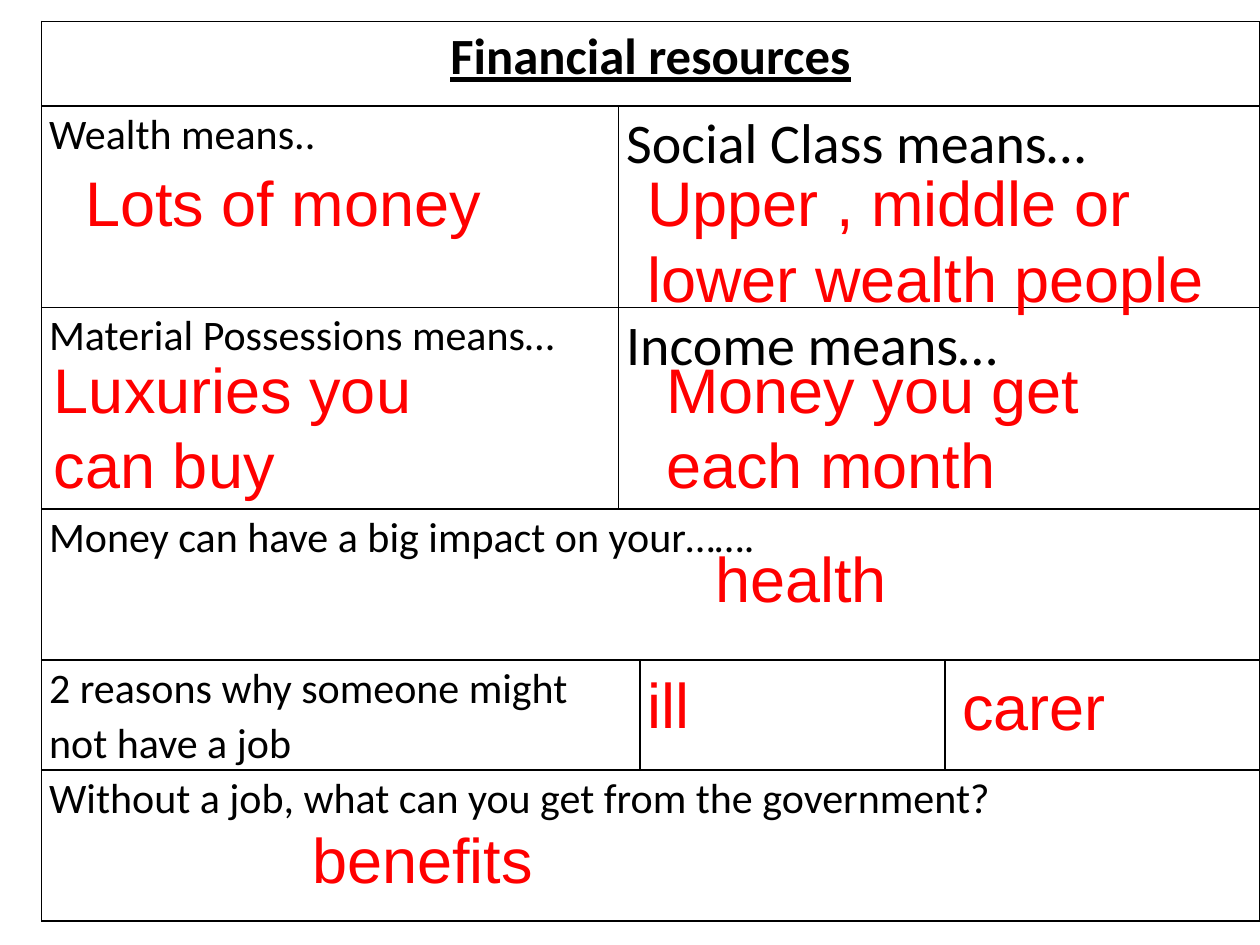
from dataclasses import dataclass

from lxml import etree
from pptx import Presentation
from pptx.dml.color import RGBColor
from pptx.enum.text import MSO_AUTO_SIZE, PP_ALIGN
from pptx.oxml.ns import qn
from pptx.slide import Slide
from pptx.table import Table, _Cell
from pptx.util import Inches, Pt

CENTER, LEFT = PP_ALIGN.CENTER, PP_ALIGN.LEFT
FIT_SHAPE = MSO_AUTO_SIZE.SHAPE_TO_FIT_TEXT
BLACK = RGBColor(0x00, 0x00, 0x00)
RED = RGBColor(0xFF, 0x00, 0x00)
BLANK_LAYOUT = 6
COLUMN_WIDTHS = (4.58, 0.17, 2.42, 2.5)
ROW_HEIGHTS = (0.67, 1.6, 1.6, 1.2, 0.86, 1.2)


@dataclass(frozen=True)
class Question:
    text: str
    row: int
    first_column: int
    last_column: int
    size: int = 24
    heading: bool = False


@dataclass(frozen=True)
class Answer:
    text: str
    left: float
    top: float
    width: float = 3.58
    height: float = 0.71


QUESTIONS = (
    Question("Financial resources", 0, 0, 3, 29, True),
    Question("Wealth means..", 1, 0, 0),
    Question("Social Class means…", 1, 1, 3, 32),
    Question("Material Possessions means…", 2, 0, 0),
    Question("Income means…", 2, 1, 3, 32),
    Question("Money can have a big impact on your…….", 3, 0, 3),
    Question("2 reasons why someone might not have a job", 4, 0, 1),
    Question("Without a job, what can you get from the government?", 5, 0, 3),
)

ANSWERS = (
    Answer("Lots of money", 0.58, 1.25),
    Answer("Upper , middle or lower wealth people", 5.04, 1.25, 5.17, 1.31),
    Answer("Luxuries you can buy", 0.33, 2.73, height=1.31),
    Answer("Money you get each month", 5.19, 2.73, height=1.31),
    Answer("health", 5.58, 4.23),
    Answer("ill", 5.04, 5.23, 2.46),
    Answer("carer", 7.54, 5.25),
    Answer("benefits", 2.38, 6.46),
)


def style_cell(cell: _Cell) -> None:
    """Give a cell thin black borders, no fill and narrow margins."""
    cell.margin_left = cell.margin_right = Inches(0.06)
    cell.margin_top = cell.margin_bottom = Inches(0)
    properties = cell._tc.get_or_add_tcPr()
    for side in ("a:lnL", "a:lnR", "a:lnT", "a:lnB"):
        line = etree.SubElement(properties, qn(side), w=str(Pt(1)))
        fill = etree.SubElement(line, qn("a:solidFill"))
        etree.SubElement(fill, qn("a:srgbClr"), val=str(BLACK))
    cell.fill.background()


def add_grid(slide: Slide) -> Table:
    """Add the empty worksheet grid."""
    frame = slide.shapes.add_table(
        len(ROW_HEIGHTS), len(COLUMN_WIDTHS), Inches(0.33), Inches(0.17),
        Inches(sum(COLUMN_WIDTHS)), Inches(sum(ROW_HEIGHTS)),
    )
    table = frame.table
    table.first_row = table.horz_banding = False
    for column, width in zip(table.columns, COLUMN_WIDTHS):
        column.width = Inches(width)
    for row, height in zip(table.rows, ROW_HEIGHTS):
        row.height = Inches(height)
    for cell in table.iter_cells():
        style_cell(cell)
    return table


def write_question(table: Table, question: Question) -> None:
    """Write a question across its columns of the grid."""
    cell = table.cell(question.row, question.first_column)
    if question.last_column > question.first_column:
        cell.merge(table.cell(question.row, question.last_column))
    cell.text_frame.text = question.text
    paragraph = cell.text_frame.paragraphs[0]
    paragraph.line_spacing = 1.07
    paragraph.alignment = CENTER if question.heading else LEFT
    font = paragraph.runs[0].font
    font.name = "Calibri"
    font.size = Pt(question.size)
    font.color.rgb = BLACK
    font.bold = font.underline = question.heading


def add_answer(slide: Slide, answer: Answer) -> None:
    """Place a red answer over the grid."""
    shape = slide.shapes.add_textbox(
        Inches(answer.left), Inches(answer.top),
        Inches(answer.width), Inches(answer.height),
    )
    text_frame = shape.text_frame
    text_frame.word_wrap = True
    text_frame.auto_size = FIT_SHAPE
    text_frame.text = answer.text
    font = text_frame.paragraphs[0].runs[0].font
    font.name = "Arial"
    font.size = Pt(36)
    font.color.rgb = RED


def main() -> None:
    """Build the worksheet slide and save it."""
    presentation = Presentation()
    presentation.slide_width = Inches(10)
    presentation.slide_height = Inches(7.5)
    slide = presentation.slides.add_slide(presentation.slide_layouts[BLANK_LAYOUT])
    table = add_grid(slide)
    for question in QUESTIONS:
        write_question(table, question)
    for answer in ANSWERS:
        add_answer(slide, answer)
    presentation.save("out.pptx")


if __name__ == "__main__":
    main()
